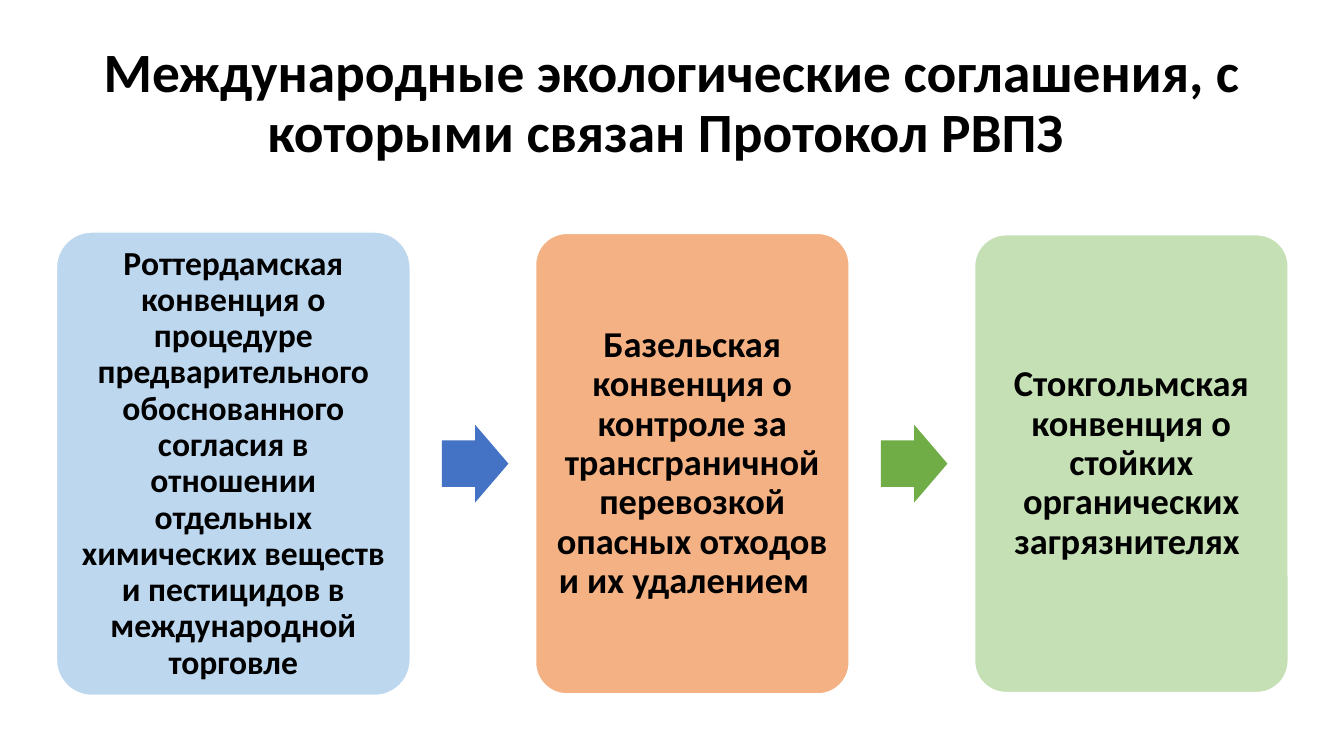
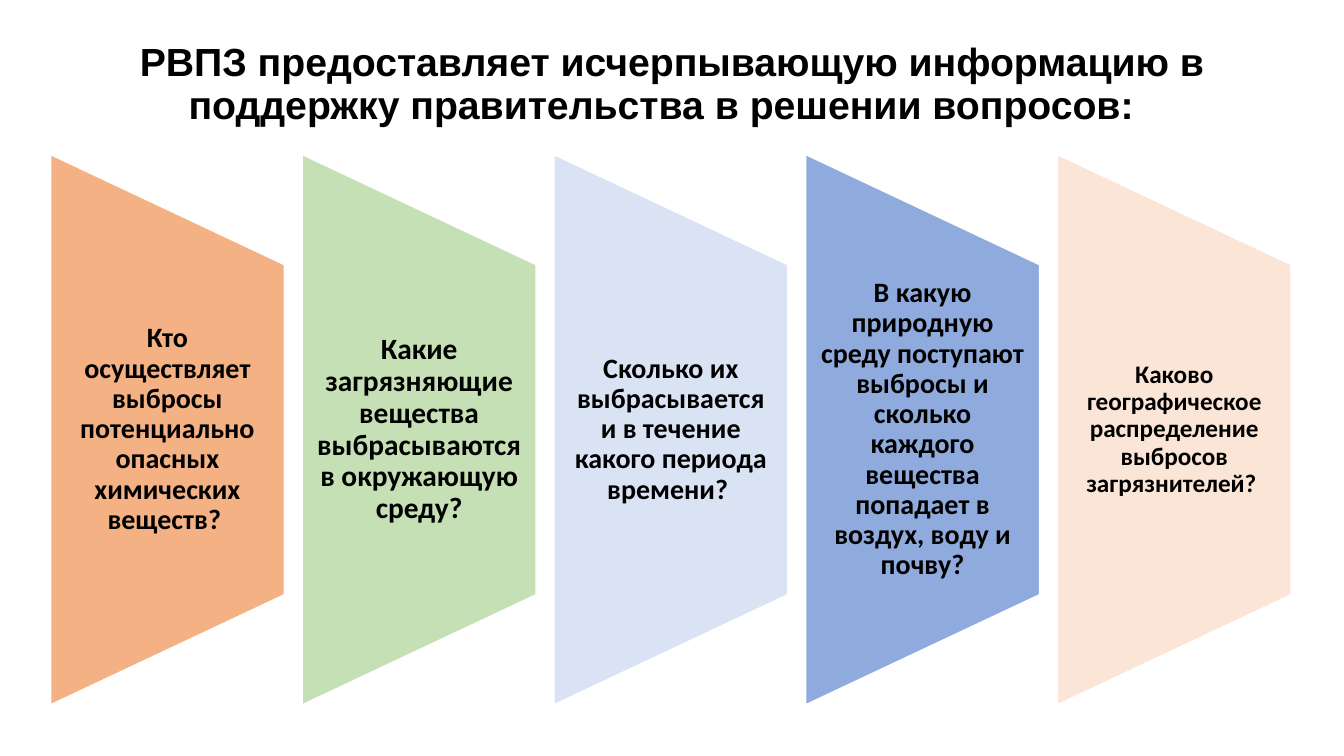
"""Build two slides on the PRTR Protocol: linked conventions and key questions."""
from dataclasses import dataclass

from pptx import Presentation
from pptx.dml.color import RGBColor as Rgb
from pptx.enum.shapes import MSO_SHAPE as Kind
from pptx.enum.text import MSO_ANCHOR as Anchor, PP_ALIGN as Align
from pptx.shapes.autoshape import Shape
from pptx.slide import Slide
from pptx.util import Pt

BLACK = Rgb(0x00, 0x00, 0x00)
WHITE = Rgb(0xFF, 0xFF, 0xFF)
SKY = Rgb(0xBD, 0xD7, 0xEE)
BLUE = Rgb(0x44, 0x72, 0xC4)
MID = Rgb(0x8F, 0xAA, 0xDC)
PALE = Rgb(0xDA, 0xE3, 0xF3)
PEACH = Rgb(0xF4, 0xB1, 0x83)
CREAM = Rgb(0xFB, 0xE5, 0xD6)
GREEN = Rgb(0x70, 0xAD, 0x47)
MINT = Rgb(0xC5, 0xE0, 0xB4)

BODY = "Calibri"
WIDE, HIGH = 960, 540


@dataclass(frozen=True)
class Area:
    left: float
    top: float
    width: float
    height: float


@dataclass(frozen=True)
class Card:
    text: str
    fill: Rgb
    size: float
    width: float = 0
    height: float = 0


PACTS = (
    Card("Роттердамская конвенция о процедуре предварительного обоснованного "
         "согласия в отношении отдельных химических веществ и пестицидов в "
         "международной торговле", SKY, 24, 252.7, 331),
    Card("Базельская конвенция о контроле за трансграничной перевозкой "
         "опасных отходов и их удалением  ", PEACH, 26, 224, 329),
    Card("Стокгольмская конвенция о стойких органических загрязнителях ",
         MINT, 26, 224, 327),
)
LINKS = (BLUE, GREEN)

ASKS = (
    Card("Кто осуществляет выбросы потенциально опасных химических веществ? ",
         PEACH, 20),
    Card("Какие загрязняющие вещества выбрасываются в окружающую среду?",
         MINT, 21),
    Card("Сколько их выбрасывается и в течение какого периода времени? ",
         PALE, 20),
    Card("В какую природную среду поступают выбросы и сколько каждого "
         "вещества попадает в воздух, воду и почву?", MID, 20),
    Card("Каково географическое распределение выбросов загрязнителей? ",
         CREAM, 18),
)


def put(obj: object, vals: dict) -> None:
    for name, val in vals.items():
        setattr(obj, name, val)


def write(shape: Shape, text: str, size: float, face: str = BODY,
          side: float = 7.2, edge: float = 3.6) -> None:
    frame = shape.text_frame
    put(frame, {"word_wrap": True, "vertical_anchor": Anchor.MIDDLE,
                "margin_left": Pt(side), "margin_right": Pt(side),
                "margin_top": Pt(edge), "margin_bottom": Pt(edge)})
    para = frame.paragraphs[0]
    put(para, {"alignment": Align.CENTER, "line_spacing": 0.9})
    run = para.add_run()
    run.text = text
    put(run.font, {"name": face, "size": Pt(size), "bold": True})
    run.font.color.rgb = BLACK


def spot(area: Area) -> tuple[Pt, Pt, Pt, Pt]:
    return Pt(area.left), Pt(area.top), Pt(area.width), Pt(area.height)


def label(slide: Slide, area: Area, text: str, size: float,
          face: str = BODY, side: float = 7.2, edge: float = 3.6) -> None:
    write(slide.shapes.add_textbox(*spot(area)), text, size, face, side, edge)


def block(slide: Slide, kind: Kind, area: Area, fill: Rgb,
          rim: bool = True) -> Shape:
    shape = slide.shapes.add_shape(kind, *spot(area))
    shape.shadow.inherit = False
    shape.fill.solid()
    shape.fill.fore_color.rgb = fill
    if rim:
        shape.line.color.rgb = WHITE
        shape.line.width = Pt(1)
    else:
        shape.line.fill.background()
    return shape


def title(slide: Slide, text: str, top: float, size: float, face: str) -> None:
    label(slide, Area(66, top, WIDE - 132, 91.5), text, size, face)


def pacts(slide: Slide) -> None:
    title(slide, "Международные экологические соглашения, с которыми связан "
          "Протокол РВПЗ ", 28.8, 39.6, BODY)
    left, mid = 40.3, 331.2
    wide, high, before, after = 47.5, 55.4, 22.7, 19.4
    for num, card in enumerate(PACTS):
        if num:
            left += before
            arrow = block(slide, Kind.RIGHT_ARROW,
                          Area(left, mid - high / 2, wide, high),
                          LINKS[num - 1], False)
            arrow.adjustments[0] = 0.6
            left += wide + after
        area = Area(left, mid - card.height / 2, card.width, card.height)
        box = block(slide, Kind.ROUNDED_RECTANGLE, area, card.fill)
        box.adjustments[0] = 0.1
        pad = card.size * 0.3
        write(box, card.text, card.size, side=pad, edge=pad)
        left += card.width


def asks(slide: Slide) -> None:
    title(slide, "РВПЗ предоставляет исчерпывающую информацию в поддержку "
          "правительства в решении вопросов:  ", 15.3, 28, "Arial")
    first, step, mid = 36.1, 179.8, 306.9
    wide, tall, high = 167, 393, 235.4
    for num, card in enumerate(ASKS):
        left = first + num * step
        area = Area(left + (wide - tall) / 2, mid - wide / 2, tall, wide)
        panel = block(slide, Kind.FLOWCHART_MANUAL_OPERATION, area, card.fill)
        panel.rotation = 270
        label(slide, Area(left, mid - high / 2, wide, high), card.text,
              card.size, side=card.size / 2, edge=0)


def main() -> None:
    deck = Presentation()
    put(deck, {"slide_width": Pt(WIDE), "slide_height": Pt(HIGH)})
    for draw in (pacts, asks):
        draw(deck.slides.add_slide(deck.slide_layouts[6]))
    deck.save("out.pptx")


if __name__ == "__main__":
    main()
